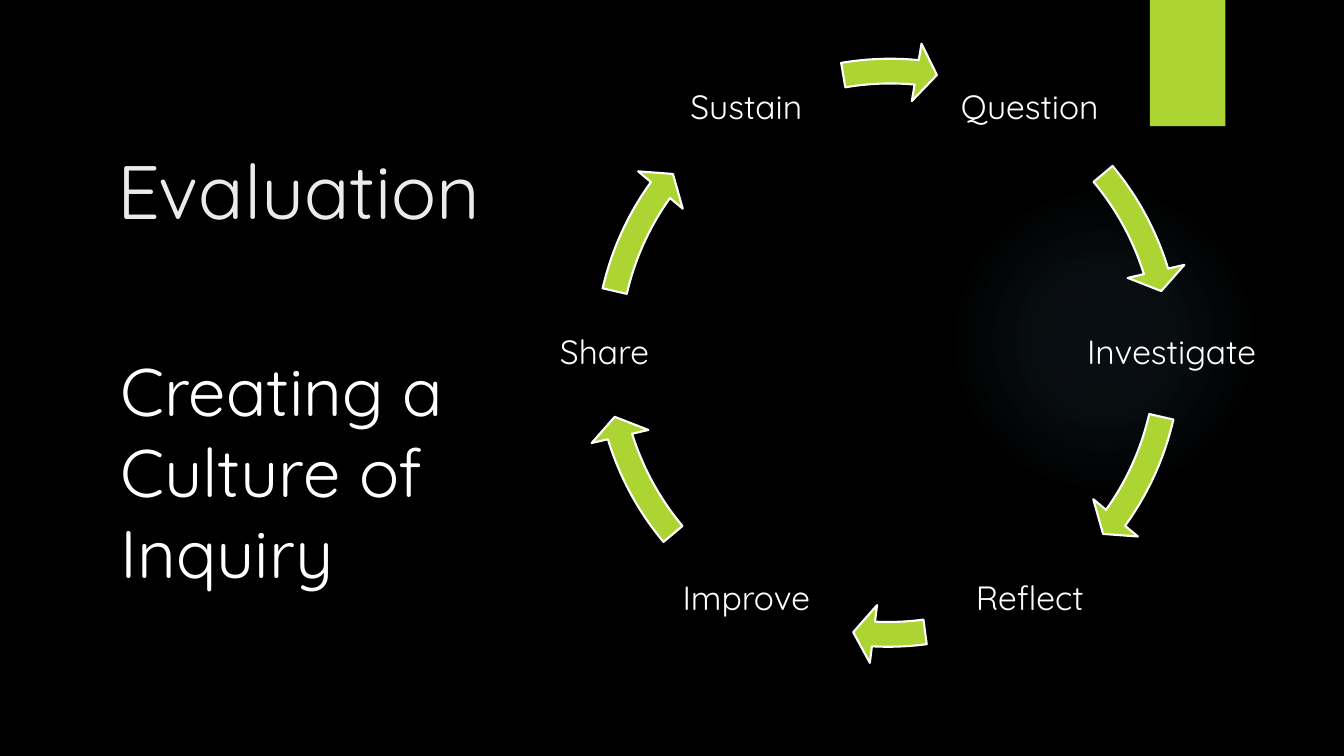
"""Slide with a title, a lead text and a six-step inquiry cycle."""
import math

from lxml import etree
from pptx import Presentation
from pptx.dml.color import RGBColor
from pptx.enum import shapes, text
from pptx.oxml import ns
from pptx.util import Cm, Pt

BLACK = RGBColor(0x00, 0x00, 0x00)
WHITE = RGBColor(0xFF, 0xFF, 0xFF)
SILVER = RGBColor(0xEB, 0xEB, 0xEB)
LIME = RGBColor(0xAC, 0xD4, 0x33)
GLOW = RGBColor(0x7A, 0xC4, 0xF0)
FONT = "Quicksand"
GLOW_STOPS = [(0, 7), (36, 6), (69, 0)]
STEPS = ["Question", "Investigate", "Reflect", "Improve", "Share", "Sustain"]
ARROW_DEGREES = [(320.07, 342.88), (12.95, 35.76), (82.4, 92.97),
                 (140.07, 162.88), (192.95, 215.76), (260.32, 275.38)]


def add_plain_shape(s, kind, left, top, width, height):
    """Add a preset shape without shadow or outline."""
    sp = s.shapes.add_shape(kind, Cm(left), Cm(top), Cm(width), Cm(height))
    sp.shadow.inherit = False
    sp.line.fill.background()
    return sp


def add_label(s, box, words, size, color, anchor, align, inset=None):
    """Add wrapped one-paragraph text in the given box."""
    tf = s.shapes.add_textbox(*(Cm(v) for v in box)).text_frame
    tf.word_wrap = True
    tf.vertical_anchor = anchor
    if inset is not None:
        tf.margin_left = tf.margin_right = Cm(inset)
        tf.margin_top = tf.margin_bottom = Cm(inset)
    tf.text = words
    p = tf.paragraphs[0]
    p.alignment = align
    r = p.runs[0]
    r.font.name, r.font.size = FONT, Pt(size)
    r.font.color.rgb = color
    return p


def add_glow(s, left, top, size):
    """Add a soft round glow that fades to nothing at its rim."""
    sp = add_plain_shape(s, shapes.MSO_SHAPE.OVAL, left, top, size, size)
    stops = "".join(
        f'<a:gs pos="{pos * 1000}"><a:srgbClr val="{GLOW}">'
        f'<a:alpha val="{alpha * 1000}"/></a:srgbClr></a:gs>'
        for pos, alpha in GLOW_STOPS)
    grad = etree.fromstring(
        f'<a:gradFill {ns.nsdecls("a")}><a:gsLst>{stops}</a:gsLst>'
        '<a:path path="circle"><a:fillToRect l="50000" t="50000" '
        'r="50000" b="50000"/></a:path></a:gradFill>')
    sp._element.spPr.find(ns.qn("a:prstGeom")).addnext(grad)


def add_tab(s, left, top, width, height):
    """Add the lime tab that hangs from the top edge."""
    sp = add_plain_shape(s, shapes.MSO_SHAPE.RECTANGLE,
                         left, top, width, height)
    sp.fill.solid()
    sp.fill.fore_color.rgb = LIME


def add_heading(s, left, top, width):
    """Add the title and, below it, the lead text."""
    add_label(s, (left, top, width, 4.03), "Evaluation", 54, SILVER,
              text.MSO_ANCHOR.BOTTOM, text.PP_ALIGN.CENTER)
    add_label(s, (left + 0.38, top + 6.68, width - 0.38, 8.05),
              "Creating a Culture of Inquiry", 48, WHITE,
              text.MSO_ANCHOR.TOP, text.PP_ALIGN.LEFT)


def add_cycle(s, left, top, size):
    """Add the step labels on a ring with an arrow after each one."""
    radius, label_w, label_h = 0.458 * size, 6, 3.2
    cx, cy = left + size / 2, top + size / 2
    for i, (step, (start, end)) in enumerate(zip(STEPS, ARROW_DEGREES)):
        angle = math.radians(360 / len(STEPS) * (i - 1))
        x = cx + radius * math.cos(angle) - label_w / 2
        y = cy + radius * math.sin(angle) - label_h / 2
        p = add_label(s, (x, y, label_w, label_h), step, 24, WHITE,
                      text.MSO_ANCHOR.MIDDLE, text.PP_ALIGN.CENTER, 0.08)
        p.line_spacing = 0.9

        nudge = 0.06 if step == STEPS[-1] else 0
        arrow = add_plain_shape(s, shapes.MSO_SHAPE.CIRCULAR_ARROW,
                                left + nudge, top - nudge, size, size)
        for n, value in enumerate([0.04, 2.5, end * 0.6, start * 0.6, 0.047]):
            arrow.adjustments[n] = value
        arrow.fill.solid()
        arrow.fill.fore_color.rgb = LIME
        arrow.line.color.rgb = WHITE
        arrow.line.width = Pt(1.5)


def main():
    """Build the slide and save it."""
    prs = Presentation()
    prs.slide_width, prs.slide_height = Cm(33.87), Cm(19.05)
    s = prs.slides.add_slide(prs.slide_layouts[6])
    s.background.fill.solid()
    s.background.fill.fore_color.rgb = BLACK
    add_glow(s, 23.9, 4.65, 7.82)
    add_tab(s, 28.98, 0, 1.9, 3.18)
    add_heading(s, 2.41, 2.01, 10.24)
    add_cycle(s, 14.58, 1.12, 15.6)
    prs.save("out.pptx")


if __name__ == "__main__":
    main()
